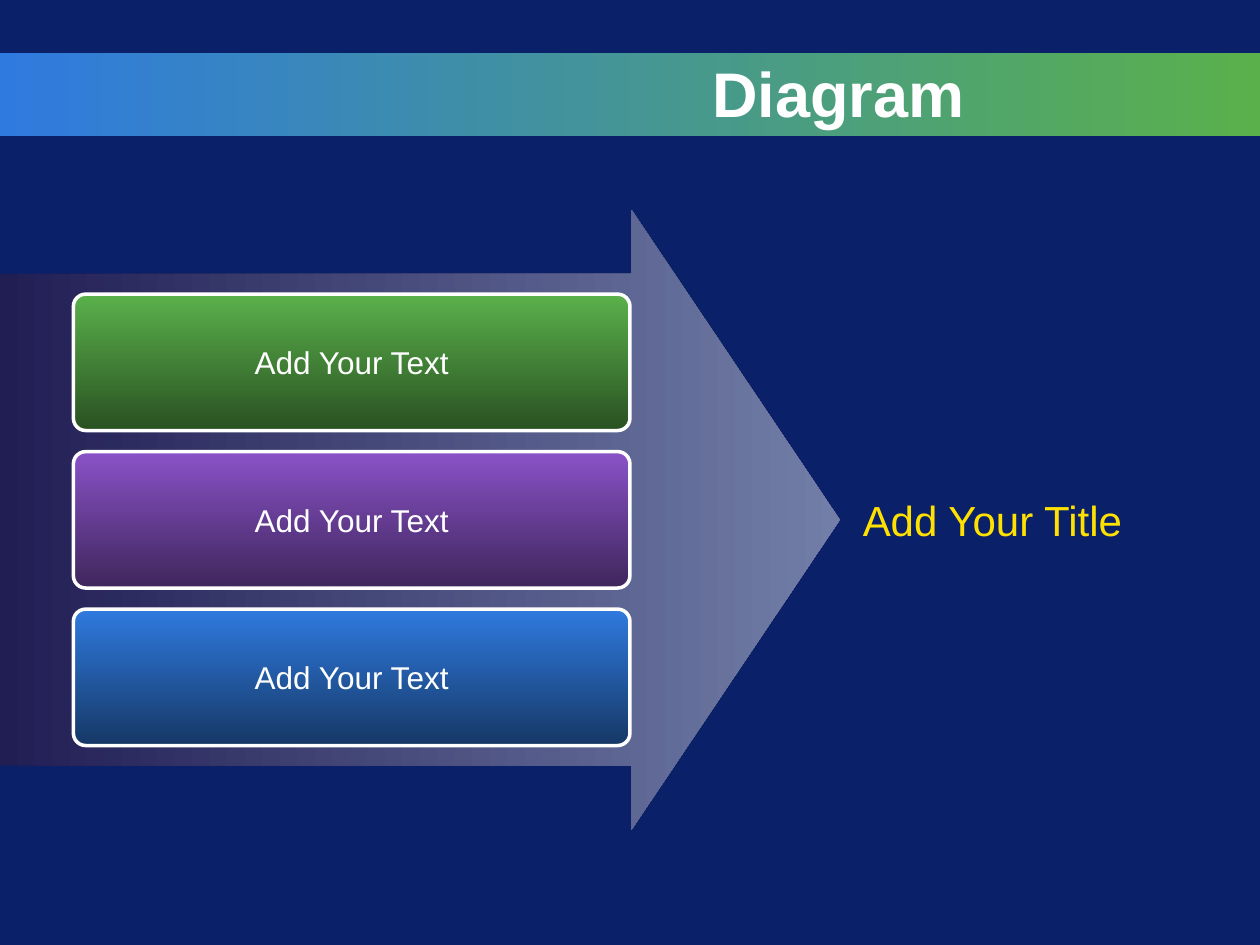
from dataclasses import dataclass

from pptx import Presentation
from pptx.dml.color import RGBColor
from pptx.enum.shapes import MSO_SHAPE
from pptx.enum.text import MSO_ANCHOR, PP_ALIGN
from pptx.util import Cm, Pt

RECTANGLE = MSO_SHAPE.RECTANGLE
ROUNDED = MSO_SHAPE.ROUNDED_RECTANGLE
RIGHT_ARROW = MSO_SHAPE.RIGHT_ARROW
MIDDLE = MSO_ANCHOR.MIDDLE
CENTER, RIGHT = PP_ALIGN.CENTER, PP_ALIGN.RIGHT
ACROSS, DOWN = 0, 270
BLANK_LAYOUT = 6


@dataclass(frozen=True)
class Theme:
    font: str = "Arial"
    background: str = "0A2068"
    white: str = "FFFFFF"
    yellow: str = "FFE101"
    band: tuple = ("2F7ADF", "5AB14B")
    arrow: tuple = ("211E54", "727EA8")
    green: tuple = ("5AB14B", "295122")
    purple: tuple = ("8A52C8", "3F265C")
    blue: tuple = ("2F7ADF", "163866")
    heading_size: int = 36
    title_size: int = 24
    body_size: int = 18
    outline: int = 2


def write_text(box, text, *, font, size, color, align=CENTER, bold=False, wrap=True):
    frame = box.text_frame
    frame.word_wrap = wrap
    frame.vertical_anchor = MIDDLE
    para = frame.paragraphs[0]
    para.alignment = align
    span = para.add_run()
    span.text = text
    span.font.name = font
    span.font.size = Pt(size)
    span.font.bold = bold
    span.font.color.rgb = RGBColor.from_string(color)


class SlideBuilder:
    def __init__(self, page, theme):
        self.page = page
        self.theme = theme
        fill = page.background.fill
        fill.solid()
        fill.fore_color.rgb = RGBColor.from_string(theme.background)

    def gradient_shape(self, kind, left, top, width, height, colors, angle, adjustments=()):
        shape = self.page.shapes.add_shape(kind, Cm(left), Cm(top), Cm(width), Cm(height))
        shape.shadow.inherit = False
        for index, value in enumerate(adjustments):
            shape.adjustments[index] = value
        shape.fill.gradient()
        shape.fill.gradient_angle = angle
        for stop, color in zip(shape.fill.gradient_stops, colors):
            stop.color.rgb = RGBColor.from_string(color)
        shape.line.fill.background()
        return shape

    def card(self, left, top, width, height, colors, text):
        box = self.gradient_shape(ROUNDED, left, top, width, height, colors, DOWN, (0.09,))
        box.line.color.rgb = RGBColor.from_string(self.theme.white)
        box.line.width = Pt(self.theme.outline)
        write_text(box, text, font=self.theme.font, size=self.theme.body_size,
                   color=self.theme.white, wrap=False)

    def label(self, left, top, width, height, text, **style):
        box = self.page.shapes.add_textbox(Cm(left), Cm(top), Cm(width), Cm(height))
        write_text(box, text, font=self.theme.font, **style)


def main():
    deck = Presentation()
    deck.slide_width, deck.slide_height = Cm(25.4), Cm(19.05)
    theme = Theme()
    builder = SlideBuilder(deck.slides.add_slide(deck.slide_layouts[BLANK_LAYOUT]), theme)

    builder.gradient_shape(RECTANGLE, 0, 1.06, 25.4, 1.69, theme.band, ACROSS)
    builder.label(1.27, 1.06, 18.42, 1.59, "Diagram", size=theme.heading_size,
                  color=theme.white, align=RIGHT, bold=True)

    builder.gradient_shape(RIGHT_ARROW, 0, 4.23, 16.93, 12.5, theme.arrow, ACROSS,
                           (0.793, 0.336))

    card_top, card_pitch = 5.93, 3.175
    for row, colors in enumerate((theme.green, theme.purple, theme.blue)):
        builder.card(1.48, card_top + row * card_pitch, 11.22, 2.75, colors, "Add Your Text")

    builder.label(16.51, 8.68, 6.99, 3.6, "Add Your Title", size=theme.title_size,
                  color=theme.yellow)

    deck.save("out.pptx")


if __name__ == "__main__":
    main()
